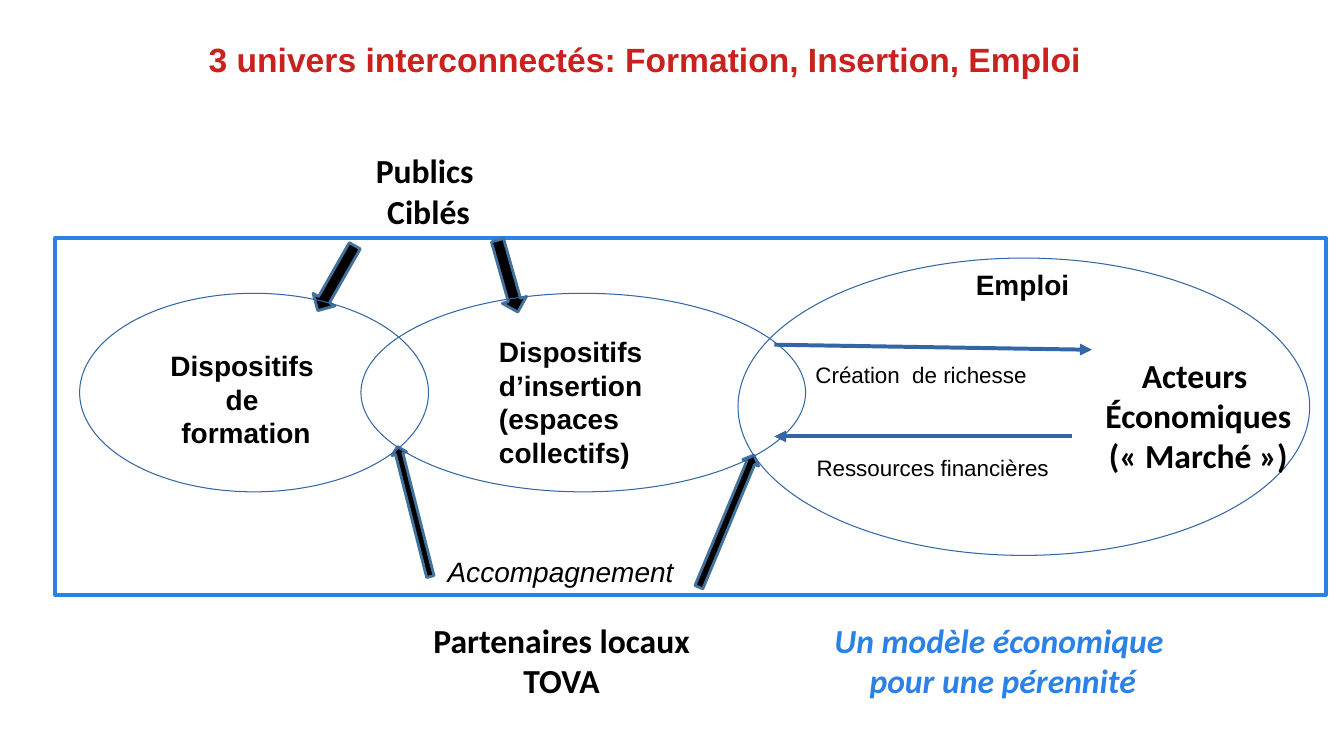
"""Build the slide on the three linked worlds of training, integration and employment."""
from dataclasses import dataclass

import lxml.etree
import pptx
import pptx.dml.color
import pptx.enum.shapes
import pptx.enum.text
import pptx.oxml.ns
import pptx.util

Inches = pptx.util.Inches
Pt = pptx.util.Pt
SHAPE = pptx.enum.shapes.MSO_SHAPE
ALIGN = pptx.enum.text.PP_ALIGN

BLACK, RED, BLUE = "000000", "C9211E", "2C82E4"
LINE_BLUE, ARROW_EDGE = "3465A4", "43729D"


@dataclass
class Box:
    left: float
    top: float
    width: float
    height: float

    def lengths(self):
        return [Inches(v) for v in (self.left, self.top, self.width, self.height)]


@dataclass
class Label:
    box: Box
    text: str
    size: int = 20
    font: str = "Arial"
    color: str = BLACK
    bold: bool = True
    italic: bool = False
    align: ALIGN = ALIGN.LEFT


@dataclass
class BlockArrow:
    box: Box
    kind: SHAPE
    rotation: float
    head: float


@dataclass
class Flow:
    start: tuple[float, float]
    end: tuple[float, float]


FRAME = Box(0.55, 2.36, 12.6, 3.54)
WORLDS = [
    Box(0.79, 2.91, 3.46, 1.97),
    Box(3.58, 2.91, 4.41, 1.97),
    Box(7.32, 2.56, 5.67, 2.95),
]
BLOCK_ARROWS = [
    BlockArrow(Box(3.21, 2.39, 0.25, 0.74), SHAPE.DOWN_ARROW, 29.7, 0.5),
    BlockArrow(Box(4.91, 2.37, 0.25, 0.74), SHAPE.DOWN_ARROW, 344.2, 0.5),
    BlockArrow(Box(4.03, 4.41, 0.15, 1.33), SHAPE.UP_ARROW, 345.8, 0.49),
    BlockArrow(Box(7.12, 4.46, 0.17, 1.42), SHAPE.UP_ARROW, 22.6, 0.49),
]
FLOWS = [
    Flow((7.68, 3.42), (10.83, 3.47)),
    Flow((10.63, 4.33), (7.68, 4.33)),
]
TITLE = Label(Box(1.97, 0.34, 9.45, 0.84),
              "3 univers interconnectés: Formation, Insertion, Emploi", size=24, color=RED)
LABELS = [
    Label(Box(3.54, 1.44, 1.42, 0.65), "Publics \nCiblés",
          size=24, font="Calibri", align=ALIGN.CENTER),
    Label(Box(1.38, 3.41, 2.12, 1.39), "Dispositifs \nde \nformation", align=ALIGN.CENTER),
    Label(Box(4.85, 3.27, 2.11, 0.78), "Dispositifs\nd’insertion\n(espaces\ncollectifs)"),
    Label(Box(9.58, 2.6, 1.33, 0.63), "Emploi"),
    Label(Box(7.56, 3.53, 3.15, 0.6), "Création  de richesse",
          size=16, bold=False, align=ALIGN.CENTER),
    Label(Box(8, 4.46, 2.82, 0.66), "Ressources financières", size=16, bold=False),
    Label(Box(10.79, 3.47, 2.19, 0.94), "Acteurs \nÉconomiques\n(« Marché »)",
          size=24, font="Calibri", align=ALIGN.CENTER),
    Label(Box(4.34, 5.45, 3.02, 0.41), "Accompagnement", bold=False, italic=True),
    Label(Box(3.93, 6.1, 3.28, 0.37), "Partenaires locaux\nTOVA",
          size=24, font="Calibri", align=ALIGN.CENTER),
    Label(Box(7.09, 6.1, 5.71, 0.37), "Un modèle économique \npour une pérennité",
          size=24, font="Calibri", color=BLUE, italic=True, align=ALIGN.CENTER),
]


def rgb(value: str) -> pptx.dml.color.RGBColor:
    return pptx.dml.color.RGBColor.from_string(value)


def write_text(tf, text: str, *, size: int, font: str, color: str,
               bold: bool, italic: bool, align: ALIGN) -> None:
    tf.word_wrap = True
    tf.auto_size = pptx.enum.text.MSO_AUTO_SIZE.NONE
    tf.vertical_anchor = pptx.enum.text.MSO_ANCHOR.TOP
    for i, line in enumerate(text.split("\n")):
        p = tf.paragraphs[0] if i == 0 else tf.add_paragraph()
        p.alignment = align
        r = p.add_run()
        r.text = line
        r.font.size = Pt(size)
        r.font.name = font
        r.font.bold = bold
        r.font.italic = italic
        r.font.color.rgb = rgb(color)


def write_label(sp, label: Label) -> None:
    write_text(sp.text_frame, label.text, size=label.size, font=label.font,
               color=label.color, bold=label.bold, italic=label.italic, align=label.align)


def add_shape(slide, kind: SHAPE, box: Box, line: str, width: float, fill: str = ""):
    sp = slide.shapes.add_shape(kind, *box.lengths())
    sp.shadow.inherit = False
    if fill:
        sp.fill.solid()
        sp.fill.fore_color.rgb = rgb(fill)
    else:
        sp.fill.background()
    sp.line.color.rgb = rgb(line)
    sp.line.width = Pt(width)
    return sp


def add_block_arrow(slide, arrow: BlockArrow) -> None:
    sp = add_shape(slide, arrow.kind, arrow.box, ARROW_EDGE, 2, BLACK)
    sp.rotation = arrow.rotation
    sp.adjustments[0] = 0.5
    sp.adjustments[1] = arrow.head


def add_flow(slide, flow: Flow) -> None:
    ends = [Inches(v) for v in (*flow.start, *flow.end)]
    cx = slide.shapes.add_connector(pptx.enum.shapes.MSO_CONNECTOR.STRAIGHT, *ends)
    cx.line.color.rgb = rgb(LINE_BLUE)
    cx.line.width = Pt(2.83)
    qn = pptx.oxml.ns.qn
    lxml.etree.SubElement(cx.line._get_or_add_ln(), qn("a:tailEnd"), type="triangle")
    lxml.etree.SubElement(cx._element.spPr, qn("a:effectLst"))


def main() -> None:
    prs = pptx.Presentation()
    prs.slide_width, prs.slide_height = Inches(13.33), Inches(7.5)
    slide = prs.slides.add_slide(prs.slide_layouts[5])

    title = slide.shapes.title
    title.left, title.top, title.width, title.height = TITLE.box.lengths()
    write_label(title, TITLE)

    add_shape(slide, SHAPE.RECTANGLE, FRAME, BLUE, 2.83)
    for arrow in BLOCK_ARROWS:
        add_block_arrow(slide, arrow)
    for flow in FLOWS:
        add_flow(slide, flow)
    for world in WORLDS:
        add_shape(slide, SHAPE.OVAL, world, LINE_BLUE, 0)
    for label in LABELS:
        write_label(slide.shapes.add_textbox(*label.box.lengths()), label)

    prs.save("out.pptx")


if __name__ == "__main__":
    main()
